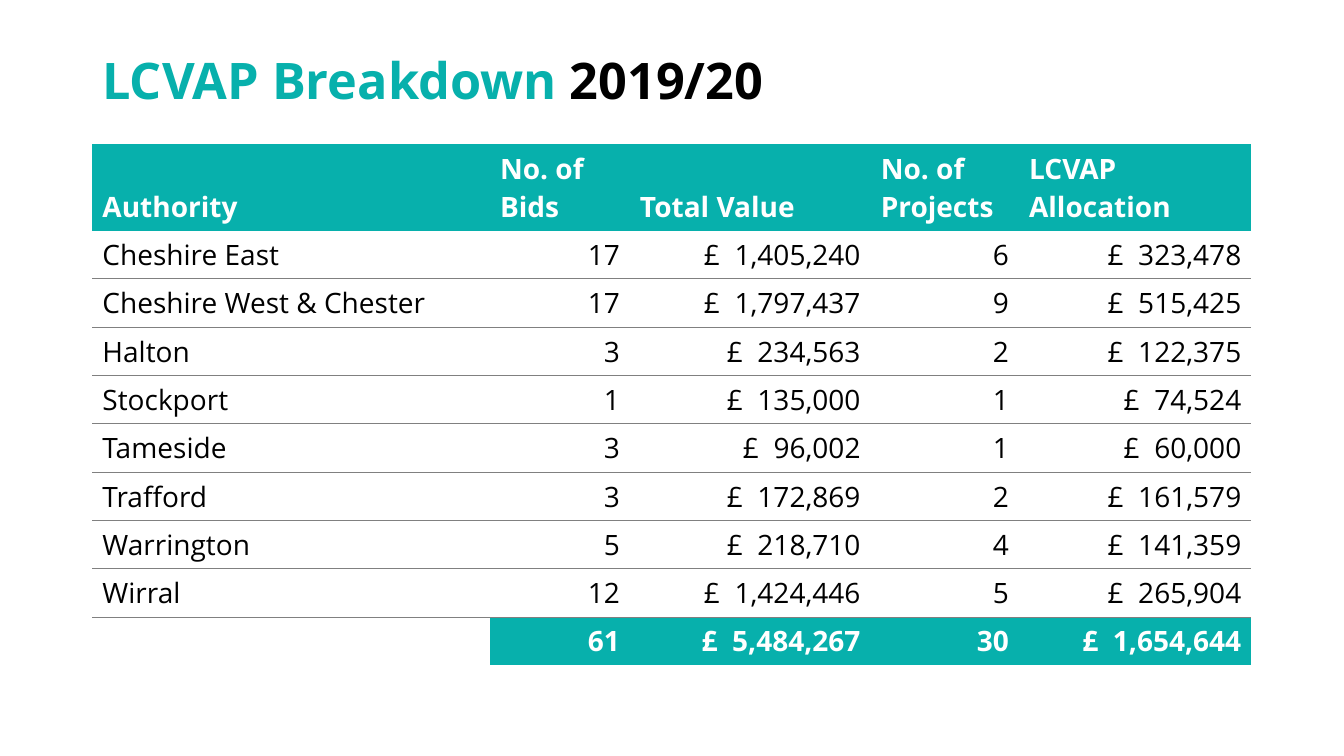
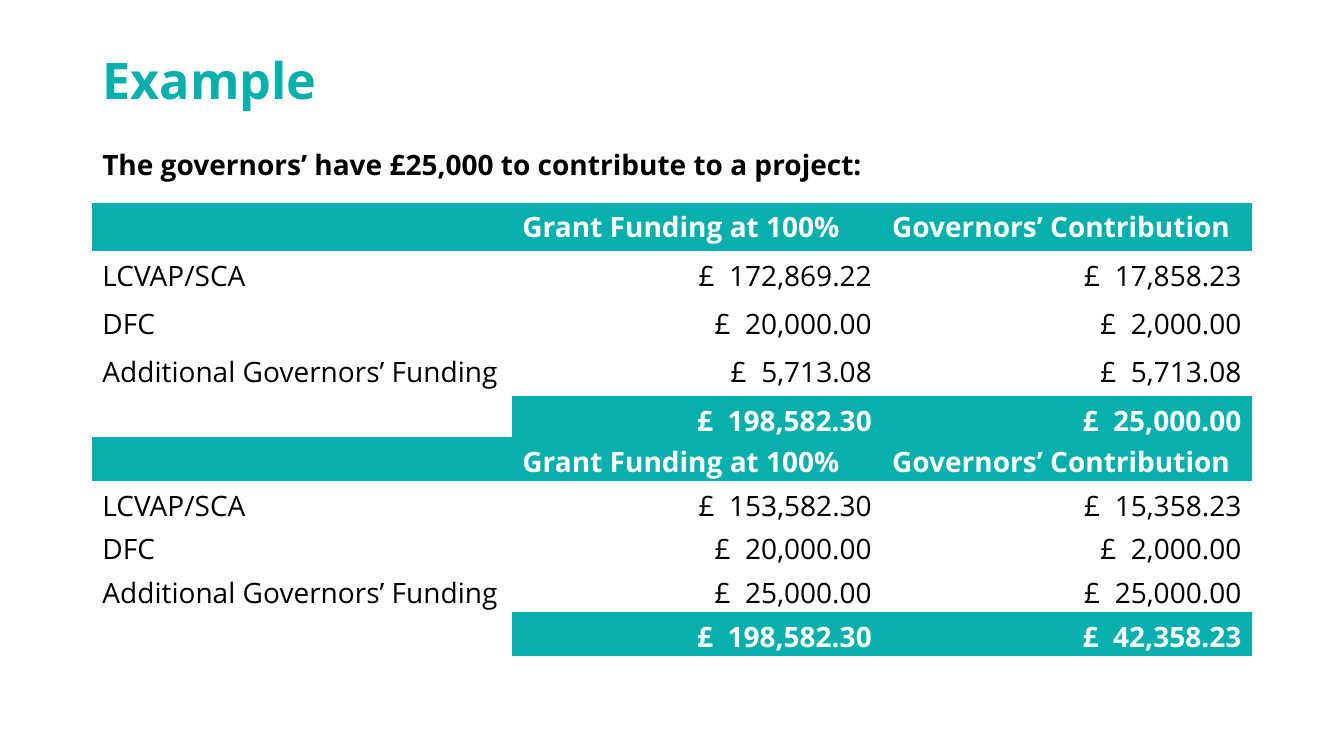
"""Build two slides on LCVAP funding: a yearly breakdown and a worked example."""
from lxml import etree
from pptx import Presentation
from pptx.dml.color import RGBColor
from pptx.enum.text import MSO_ANCHOR, MSO_AUTO_SIZE, PP_ALIGN
from pptx.oxml.ns import qn
from pptx.util import Pt

LEFT, RIGHT = PP_ALIGN.LEFT, PP_ALIGN.RIGHT
TOP, MIDDLE, BOTTOM = MSO_ANCHOR.TOP, MSO_ANCHOR.MIDDLE, MSO_ANCHOR.BOTTOM
NO_FIT = MSO_AUTO_SIZE.NONE

TEAL = RGBColor(0x07, 0xB0, 0xAC)
BLACK = RGBColor(0, 0, 0)
WHITE = RGBColor(0xFF, 0xFF, 0xFF)
GREY = RGBColor(0x80, 0x80, 0x80)

FONT = "Open Sans"
PLAIN = "{2D5ABB26-0587-4C30-8999-92F81FD0307C}"
EDGE, WIDE = 66, 828
ROW, TIGHT, TALL = 34.5, 31.25, 61.5

HEADS = ("Authority", "No. of Bids", "Total Value", "No. of Projects",
         "LCVAP Allocation")
BIDS = [
    ("Cheshire East", 17, 1405240, 6, 323478),
    ("Cheshire West & Chester", 17, 1797437, 9, 515425),
    ("Halton", 3, 234563, 2, 122375),
    ("Stockport", 1, 135000, 1, 74524),
    ("Tameside", 3, 96002, 1, 60000),
    ("Trafford", 3, 172869, 2, 161579),
    ("Warrington", 5, 218710, 4, 141359),
    ("Wirral", 12, 1424446, 5, 265904),
    ("", 61, 5484267, 30, 1654644),
]
BID_COLS = (284, 100, 172, 106, 166)
BID_FORMS = ("{}", "{}", "£  {:,}", "{}", "£  {:,}")

LEAD = "The governors’ have £25,000 to contribute to a project:"
FUND_HEADS = ("", "Grant Funding at 100%", "Governors’ Contribution")
FUND_ROWS = ("LCVAP/SCA", "DFC", "Additional Governors’ Funding", "")
FIRST = [(172869.22, 17858.23), (20000, 2000), (5713.08, 5713.08),
         (198582.30, 25000)]
SECOND = [(153582.30, 15358.23), (20000, 2000), (25000, 25000),
          (198582.30, 42358.23)]
FUND_COLS = (300, 264, 264)
FUND_FORMS = ("{}", "£  {:,.2f}", "£  {:,.2f}")


def style(font, size, color, bold=True):
    font.name, font.size, font.bold = FONT, Pt(size), bold
    font.color.rgb = color


def add_slide(deck, *parts):
    slide = deck.slides.add_slide(deck.slide_layouts[5])
    title = slide.shapes.title
    title.left, title.top = Pt(EDGE), Pt(29)
    title.width, title.height = Pt(WIDE), Pt(61)
    frame = title.text_frame
    frame.auto_size, frame.vertical_anchor = NO_FIT, MIDDLE
    para = frame.paragraphs[0]
    para.alignment, para.line_spacing = LEFT, 0.9
    for text, color in parts:
        run = para.add_run()
        run.text = text
        style(run.font, 36, color)
    return slide


def rule(cell, side):
    line = etree.Element(qn("a:" + side), w=str(Pt(0.75)))
    fill = etree.SubElement(line, qn("a:solidFill"))
    etree.SubElement(fill, qn("a:srgbClr"), val=str(GREY))
    cell._tc.get_or_add_tcPr().insert(0, line)


def fill_cell(cell, text, band, side):
    cell.vertical_anchor = TOP
    if band:
        cell.fill.solid()
        cell.fill.fore_color.rgb = TEAL
    else:
        cell.fill.background()
    para = cell.text_frame.paragraphs[0]
    para.alignment = side
    style(para.font, 20, WHITE if band else BLACK, band)
    if text:
        para.text = text


def add_grid(slide, top, heads, rows, cols, forms, high=ROW, head=ROW):
    count = len(rows) + 1
    table = slide.shapes.add_table(
        count, len(cols), Pt(EDGE), Pt(top), Pt(WIDE),
        Pt(head + high * len(rows))).table
    table.first_row = table.horz_banding = False
    table._tbl.tblPr[0].text = PLAIN
    for col, width in zip(table.columns, cols):
        col.width = Pt(width)
    for r, row in enumerate([heads, *rows]):
        table.rows[r].height = Pt(high if r else head)
        for c, value in enumerate(row):
            text = forms[c].format(value) if r else value
            band = r == 0 or (r == count - 1 and c > 0)
            fill_cell(table.cell(r, c), text, band, RIGHT if r and c else LEFT)
    return table


def add_lead(slide, text):
    box = slide.shapes.add_textbox(Pt(EDGE), Pt(101.5), Pt(WIDE), Pt(31.5))
    box.text_frame.word_wrap = True
    para = box.text_frame.paragraphs[0]
    para.text = text
    style(para.font, 20, BLACK)


def add_bids(deck):
    slide = add_slide(deck, ("LCVAP Breakdown ", TEAL), ("2019/20", BLACK))
    table = add_grid(slide, 103, HEADS, BIDS, BID_COLS, BID_FORMS, head=TALL)
    for c in range(len(HEADS)):
        table.cell(0, c).vertical_anchor = BOTTOM
        for r in range(1, len(BIDS) - 1):
            rule(table.cell(r, c), "lnB")
            rule(table.cell(r + 1, c), "lnT")


def add_example(deck):
    slide = add_slide(deck, ("Example", TEAL))
    for top, sums, high in ((145, FIRST, ROW), (312.5, SECOND, TIGHT)):
        rows = [(name, *pair) for name, pair in zip(FUND_ROWS, sums)]
        table = add_grid(slide, top, FUND_HEADS, rows, FUND_COLS, FUND_FORMS,
                         high, high)
        if high == TIGHT:
            for cell in table.iter_cells():
                cell.margin_bottom = 0
    add_lead(slide, LEAD)


def main():
    deck = Presentation()
    deck.slide_width, deck.slide_height = Pt(960), Pt(540)
    add_bids(deck)
    add_example(deck)
    deck.save("out.pptx")


if __name__ == "__main__":
    main()
